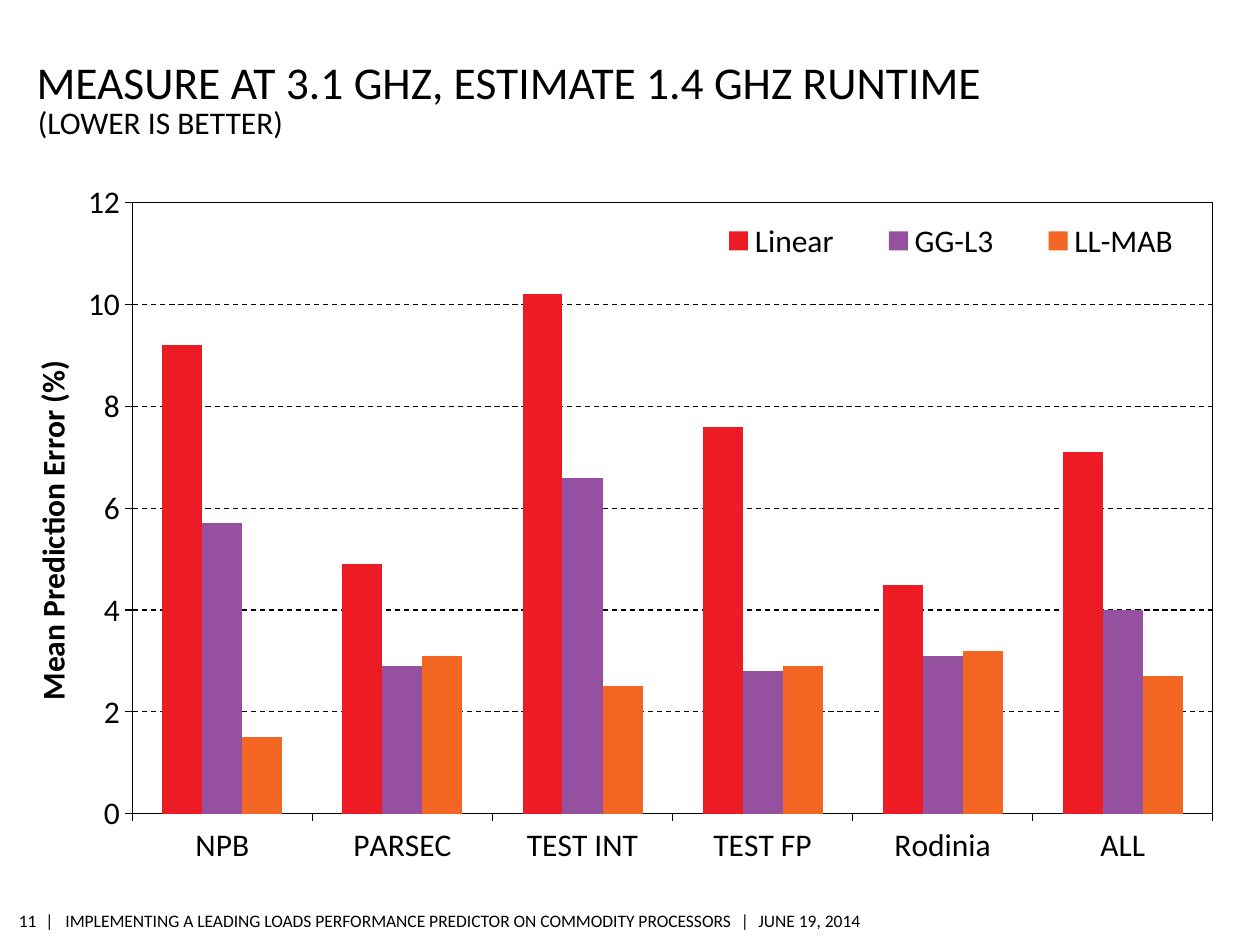
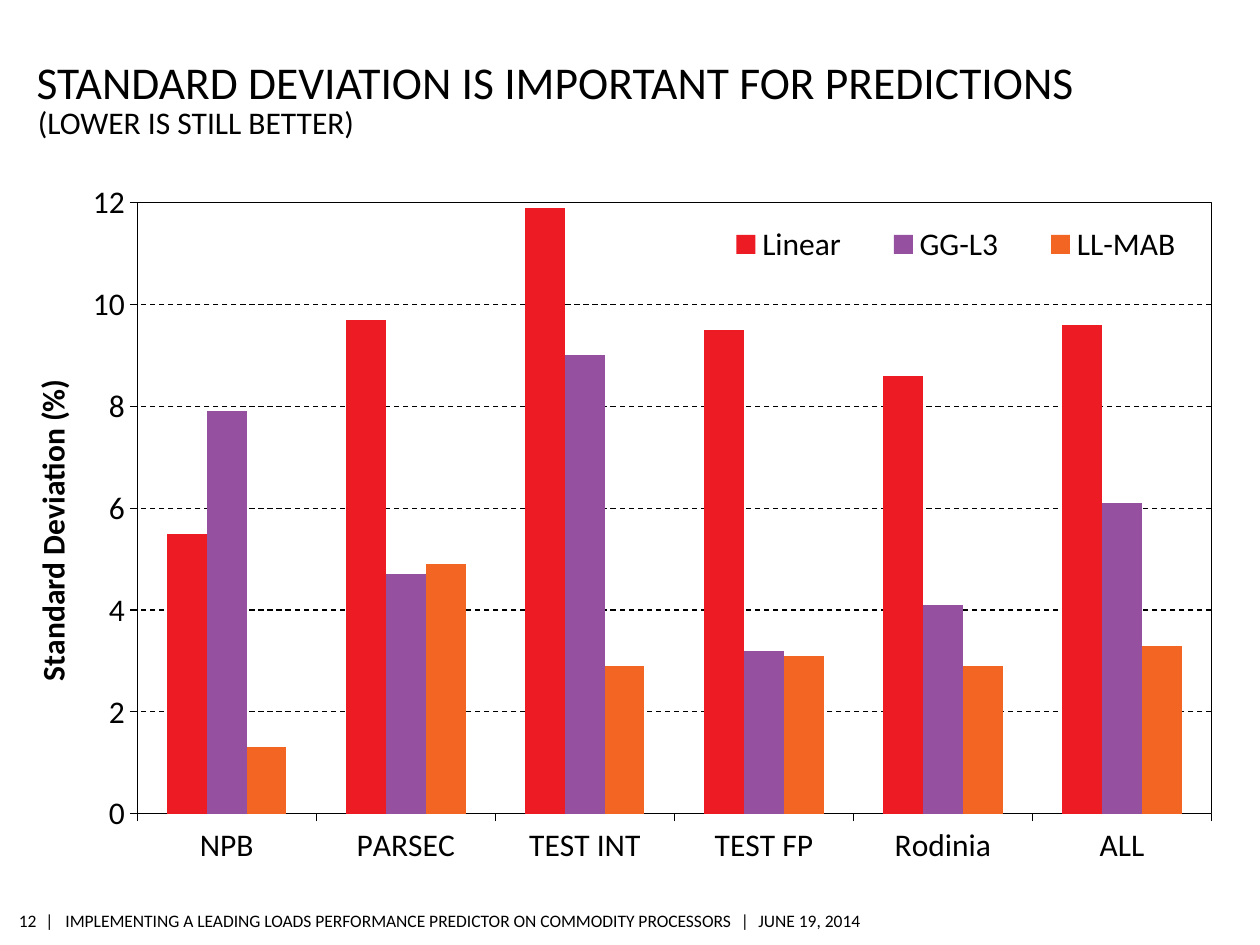
import pptx
import pptx.util
import pptx.chart.data
from pptx.dml.color import RGBColor
from pptx.enum.chart import XL_CHART_TYPE, XL_LEGEND_POSITION, XL_TICK_MARK
from pptx.enum.dml import MSO_LINE
from pptx.enum.text import MSO_ANCHOR, PP_ALIGN
from pptx.oxml import parse_xml
from pptx.oxml.ns import nsdecls

# Content
FOOTER = ("|\tIMPLEMENTING A LEADING LOADS PERFORMANCE PREDICTOR ON COMMODITY PROCESSORS"
          "\t|\tJUNE 19, 2014")
FOOTER_TABS = (0.16, 5.52, 5.66)
BENCHMARKS = ["NPB", "PARSEC", "TEST INT", "TEST FP", "Rodinia", "ALL"]
# The layouts are x, y, width, height as fractions of the chart
SLIDES = [
    {
        "number": "11",
        "title": "MEASURE AT 3.1 GHZ, ESTIMATE 1.4 GHZ RUNTIME",
        "subtitle": "(LOWER IS BETTER)",
        "axis_title": "Mean Prediction Error (%)",
        "series": {
            "Linear": [9.2, 4.9, 10.2, 7.6, 4.5, 7.1],
            "GG-L3": [5.7, 2.9, 6.6, 2.8, 3.1, 4],
            "LL-MAB": [1.5, 3.1, 2.5, 2.9, 3.2, 2.7],
        },
        "plot_layout": (0.097, 0.041, 0.875, 0.866),
        "legend_layout": (0.544, 0.05, 0.432, 0.09),
        "axis_title_layout": (0.01, 0.257),
    },
    {
        "number": "12",
        "title": "STANDARD DEVIATION IS IMPORTANT FOR PREDICTIONS",
        "subtitle": "(LOWER IS STILL BETTER)",
        "axis_title": "Standard Deviation (%)",
        "series": {
            "Linear": [5.5, 9.7, 11.9, 9.5, 8.6, 9.6],
            "GG-L3": [7.9, 4.7, 9, 3.2, 4.1, 6.1],
            "LL-MAB": [1.3, 4.9, 2.9, 3.1, 2.9, 3.3],
        },
        "plot_layout": (0.101, 0.041, 0.87, 0.866),
        "legend_layout": (0.552, 0.055, 0.424, 0.09),
        "axis_title_layout": (0.01, 0.283),
    },
]

# Shared style
COLORS = {"ink": "000000", "paper": "FFFFFF",
          "Linear": "ED1C24", "GG-L3": "9650A0", "LL-MAB": "F26522"}
FONT = "Calibri"
CHART_BOX = (0.1, 1.38, 9.8, 5.6)
TEXT_STYLES = {
    "title": {"box": (0.29, 0.34, 8.4, 0.52), "size": 26, "insets": (0.05, 0),
              "frame": {"word_wrap": True, "vertical_anchor": MSO_ANCHOR.BOTTOM}},
    "subtitle": {"box": (0.3, 0.82, 8.4, 0.31), "size": 18, "insets": (0, 0),
                 "frame": {"word_wrap": True, "vertical_anchor": MSO_ANCHOR.TOP}},
    "footer": {"box": (0.36, 7.18, 6.57, 0.26), "size": 10, "insets": (0.04, 0.04),
               "frame": {"word_wrap": True, "vertical_anchor": MSO_ANCHOR.MIDDLE}},
    "number": {"box": (0.13, 7.18, 0.16, 0.26), "size": 10, "insets": (0.04, 0.04),
               "frame": {"word_wrap": False, "vertical_anchor": MSO_ANCHOR.MIDDLE},
               "align": PP_ALIGN.RIGHT},
}


def inches(values):
    return [pptx.util.Inches(value) for value in values]


def color(name):
    return RGBColor.from_string(COLORS[name])


def set_attributes(target, values):
    for name, value in values.items():
        setattr(target, name, value)


def style_font(font, size, bold=False):
    set_attributes(font, {"name": FONT, "size": pptx.util.Pt(size), "bold": bold})
    font.color.rgb = color("ink")


def style_line(line):
    line.color.rgb = color("ink")
    line.width = pptx.util.Pt(0.75)


def add_text(slide, style_name, text, tabs=()):
    style = TEXT_STYLES[style_name]
    frame = slide.shapes.add_textbox(*inches(style["box"])).text_frame
    top, bottom = inches(style["insets"])
    set_attributes(frame, {"margin_left": 0, "margin_right": 0, "margin_top": top,
                           "margin_bottom": bottom, **style["frame"]})
    paragraph = frame.paragraphs[0]
    paragraph.alignment = style.get("align", PP_ALIGN.LEFT)
    if tabs:
        stops = "".join(f'<a:tab pos="{stop}" algn="l"/>' for stop in inches(tabs))
        paragraph._p.get_or_add_pPr().append(
            parse_xml(f'<a:tabLst {nsdecls("a")}>{stops}</a:tabLst>'))
    run = paragraph.add_run()
    run.text = text
    style_font(run.font, style["size"])


def set_layout(parent, index, fractions, inner=False):
    """Place a chart part by fractions of the chart area."""
    for old_layout in parent.xpath("c:layout"):
        parent.remove(old_layout)
    target = '<c:layoutTarget val="inner"/>' if inner else ""
    modes = '<c:xMode val="edge"/><c:yMode val="edge"/>'
    places = "".join(f'<c:{name} val="{value}"/>' for name, value in zip("xywh", fractions))
    parent.insert(index, parse_xml(
        f'<c:layout {nsdecls("c")}><c:manualLayout>{target}{modes}{places}'
        '</c:manualLayout></c:layout>'))


def add_error_chart(slide, content):
    data = pptx.chart.data.CategoryChartData()
    data.categories = BENCHMARKS
    for name, values in content["series"].items():
        data.add_series(name, values)
    chart = slide.shapes.add_chart(
        XL_CHART_TYPE.COLUMN_CLUSTERED, *inches(CHART_BOX), data).chart
    chart.has_title = False
    style_font(chart.font, 18)

    # Bars
    plot = chart.plots[0]
    set_attributes(plot, {"gap_width": 150, "overlap": 0, "vary_by_categories": False})
    for series in plot.series:
        series.format.fill.solid()
        series.format.fill.fore_color.rgb = color(series.name)

    # Axes
    value_axis = chart.value_axis
    set_attributes(value_axis, {"minimum_scale": 0, "maximum_scale": 12, "major_unit": 2,
                                "has_major_gridlines": True})
    for axis in (chart.category_axis, value_axis):
        axis.major_tick_mark = XL_TICK_MARK.OUTSIDE
        style_line(axis.format.line)
        style_font(axis.tick_labels.font, 18)
    gridline = value_axis.major_gridlines.format.line
    style_line(gridline)
    gridline.dash_style = MSO_LINE.DASH
    title_run = value_axis.axis_title.text_frame.paragraphs[0].add_run()
    title_run.text = content["axis_title"]
    style_font(title_run.font, 18, bold=True)

    # Legend
    chart.has_legend = True
    set_attributes(chart.legend, {"position": XL_LEGEND_POSITION.RIGHT,
                                  "include_in_layout": False})
    style_font(chart.legend.font, 18)

    # Placement and plot frame
    plot_area = chart.element.xpath("c:chart/c:plotArea")[0]
    set_layout(plot_area, 0, content["plot_layout"], inner=True)
    set_layout(chart.element.xpath("c:chart/c:legend")[0], 1, content["legend_layout"])
    set_layout(plot_area.xpath("c:valAx/c:title")[0], 1, content["axis_title_layout"])
    plot_area.append(parse_xml(
        f'<c:spPr {nsdecls("c", "a")}><a:noFill/><a:ln w="{pptx.util.Pt(0.75)}"><a:solidFill>'
        f'<a:srgbClr val="{COLORS["ink"]}"/></a:solidFill></a:ln></c:spPr>'))


def main():
    presentation = pptx.Presentation()
    presentation.slide_width, presentation.slide_height = inches((10, 7.5))
    for content in SLIDES:
        slide = presentation.slides.add_slide(presentation.slide_layouts[6])
        slide.background.fill.solid()
        slide.background.fill.fore_color.rgb = color("paper")
        add_text(slide, "footer", FOOTER, FOOTER_TABS)
        for part in ("number", "title", "subtitle"):
            add_text(slide, part, content[part])
        add_error_chart(slide, content)
    presentation.save("out.pptx")


if __name__ == "__main__":
    main()
